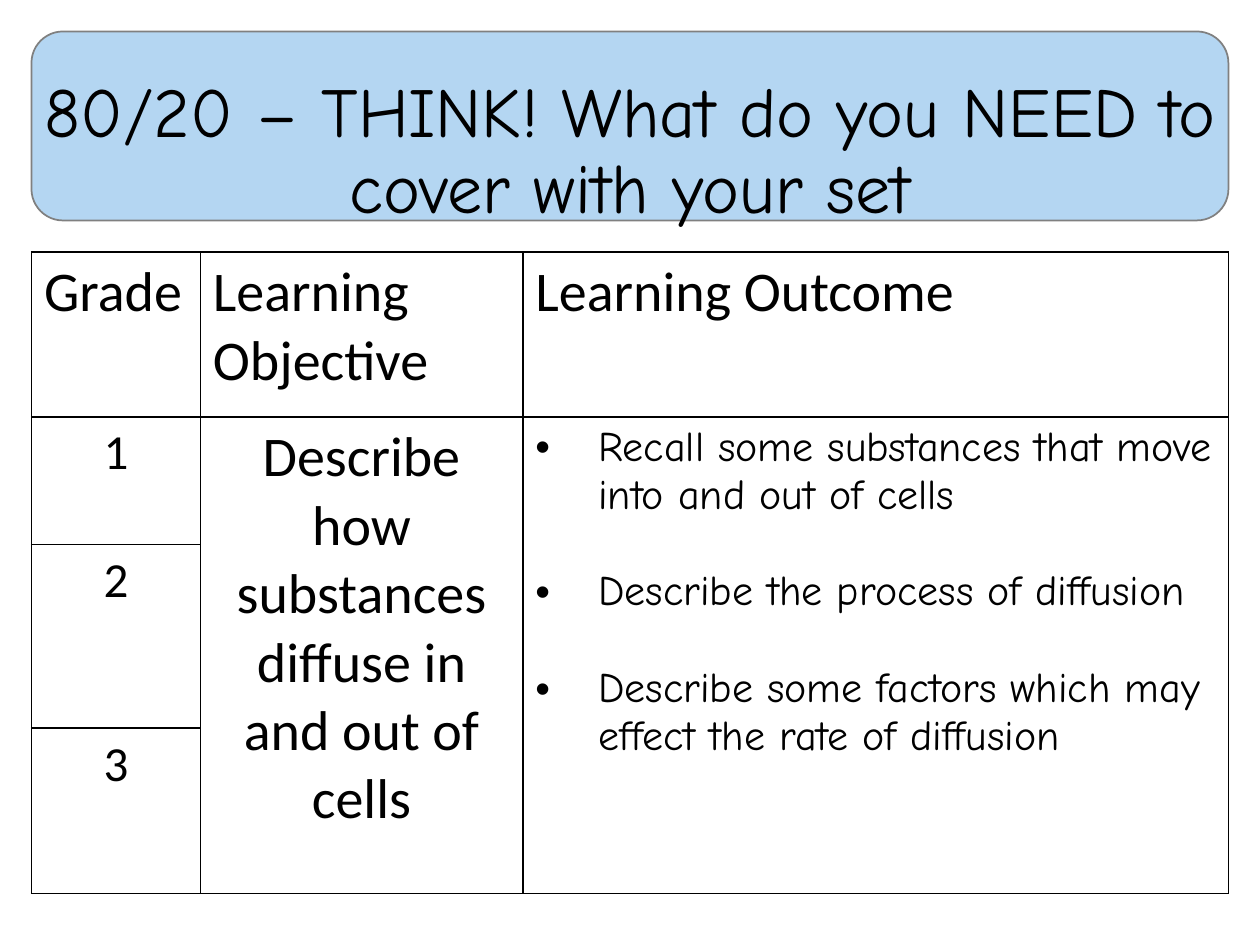
from dataclasses import dataclass

from lxml.etree import SubElement
from pptx import Presentation
from pptx.dml.color import RGBColor as Rgb
from pptx.enum.shapes import MSO_SHAPE as Shape
from pptx.enum.text import MSO_ANCHOR as Anchor, PP_ALIGN as Align
from pptx.oxml import parse_xml
from pptx.oxml.ns import nsdecls, qn
from pptx.util import Inches, Pt


@dataclass(frozen=True)
class Theme:
    ink: str = "000000"
    paper: str = "FFFFFF"
    banner: str = "B4D6F2"
    banner_edge: str = "808080"
    body_font: str = "Calibri"
    hand_font: str = "Comic Neue"
    title: int = 40
    heading: int = 32
    grade: int = 28
    outcome: int = 24


class LessonSlide:
    """Holds the theme and the slide, and draws each kind of element."""

    def __init__(self, slide, theme):
        self.slide = slide
        self.theme = theme

    def add_wording(self, paragraph, wording, size, font=None, align=Align.LEFT):
        paragraph.alignment = align
        run = paragraph.add_run()
        run.text = wording
        run.font.size = Pt(size)
        run.font.name = font or self.theme.body_font
        run.font.color.rgb = Rgb.from_string(self.theme.ink)

    def banner(self, left, top, width, height):
        panel = self.slide.shapes.add_shape(
            Shape.ROUNDED_RECTANGLE, Inches(left), Inches(top), Inches(width), Inches(height))
        panel.shadow.inherit = False
        panel.fill.solid()
        panel.fill.fore_color.rgb = Rgb.from_string(self.theme.banner)
        panel.line.color.rgb = Rgb.from_string(self.theme.banner_edge)
        panel.line.width = Pt(1)

    def title(self, wording, left, top, width, height):
        frame = self.slide.shapes.add_textbox(
            Inches(left), Inches(top), Inches(width), Inches(height)).text_frame
        frame.word_wrap = True
        frame.vertical_anchor = Anchor.BOTTOM
        heading = frame.paragraphs[0]
        heading.line_spacing = 0.9
        self.add_wording(heading, wording, self.theme.title, self.theme.hand_font, Align.CENTER)

    def grid(self, left, top, widths, heights):
        table = self.slide.shapes.add_table(
            len(heights), len(widths), Inches(left), Inches(top),
            Inches(sum(widths)), Inches(sum(heights))).table
        table.first_row = table.horz_banding = False
        for column, width in zip(table.columns, widths):
            column.width = Inches(width)
        for row, height in zip(table.rows, heights):
            row.height = Inches(height)
        for cell in table.iter_cells():
            cell.fill.solid()
            cell.fill.fore_color.rgb = Rgb.from_string(self.theme.paper)
            self.outline(cell)
        return table

    def outline(self, cell):
        properties = cell._tc.get_or_add_tcPr()
        for position, side in enumerate("LRTB"):
            properties.insert(position, parse_xml(
                f'<a:ln{side} {nsdecls("a")} w="{Pt(1)}"><a:solidFill>'
                f'<a:srgbClr val="{self.theme.ink}"/></a:solidFill></a:ln{side}>'))

    def cell_text(self, cell, wording, size, align=Align.LEFT):
        self.add_wording(cell.text_frame.paragraphs[0], wording, size, align=align)

    def bullets(self, cell, outcomes, gap):
        frame = cell.text_frame
        for number, outcome in enumerate(outcomes):
            item = frame.add_paragraph() if number else frame.paragraphs[0]
            self.add_wording(item, outcome, self.theme.outcome, self.theme.hand_font)
            if number:
                item.space_before = Pt(gap)
            properties = item._p.get_or_add_pPr()
            properties.set("marL", str(Inches(0.5)))
            properties.set("indent", str(-Inches(0.5)))
            SubElement(properties, qn("a:buFont"), typeface="Arial")
            SubElement(properties, qn("a:buChar"), char="•")


def main():
    theme = Theme()
    deck = Presentation()
    deck.slide_width, deck.slide_height = Inches(10), Inches(7.5)
    lesson = LessonSlide(deck.slides.add_slide(deck.slide_layouts[6]), theme)

    margin, content_width = 0.25, 9.5
    lesson.banner(margin, margin, content_width, 1.5)
    lesson.title("80/20 – THINK! What do you NEED to cover with your set",
                 margin, margin, content_width, 1.61)

    plan = lesson.grid(margin, 2, (1.34, 2.56, 5.6), (1.31, 1.01, 1.46, 1.31))
    for column in (1, 2):
        plan.cell(1, column).merge(plan.cell(3, column))
    for column, heading in enumerate(("Grade", "Learning Objective", "Learning Outcome")):
        lesson.cell_text(plan.cell(0, column), heading, theme.heading)
    for grade in (1, 2, 3):
        lesson.cell_text(plan.cell(grade, 0), str(grade), theme.grade, Align.CENTER)
    lesson.cell_text(plan.cell(1, 1), "Describe how substances diffuse in and out of cells",
                     theme.heading, Align.CENTER)
    lesson.bullets(plan.cell(1, 2), (
        "Recall some substances that move into and out of cells",
        "Describe the process of diffusion",
        "Describe some factors which may effect the rate of diffusion",
    ), gap=27.5)

    deck.save("out.pptx")


if __name__ == "__main__":
    main()
